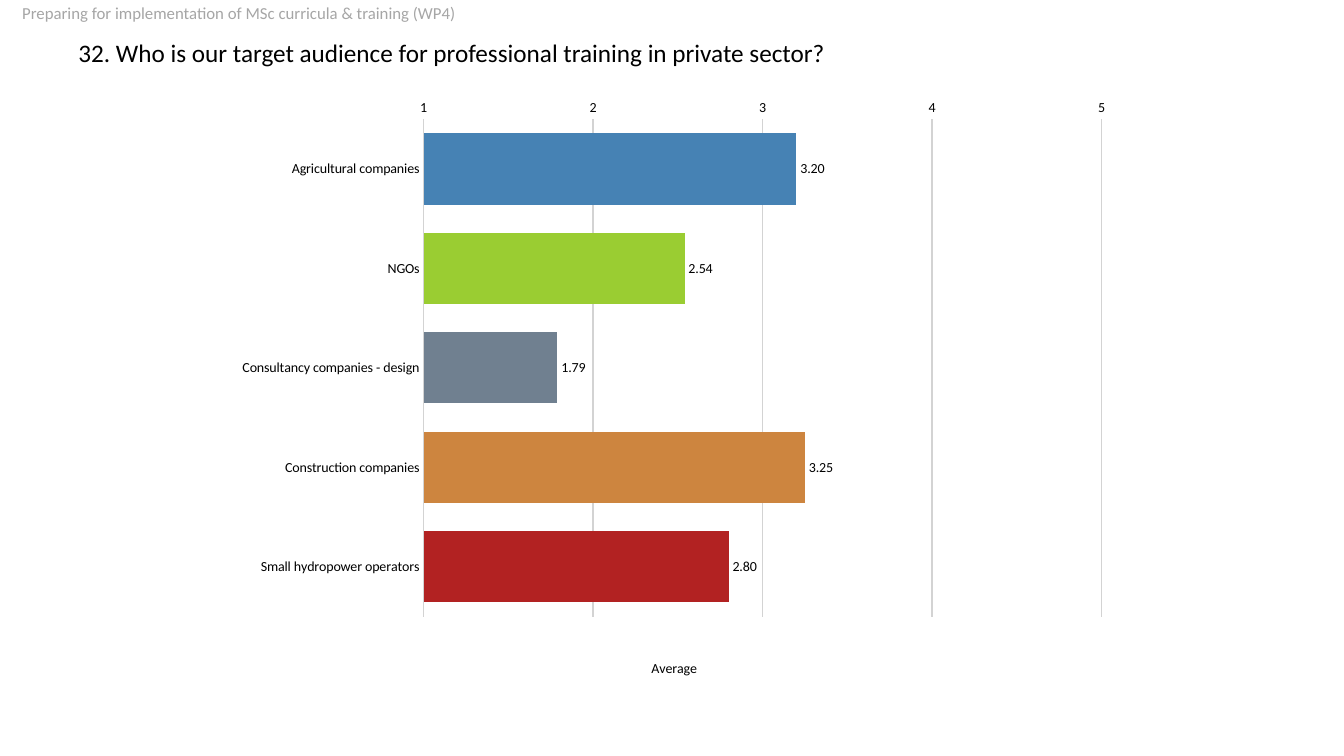
from pptx import Presentation
from pptx.chart.data import CategoryChartData
from pptx.dml.color import RGBColor
from pptx.enum.chart import XL_AXIS_CROSSES, XL_CHART_TYPE, XL_LABEL_POSITION, XL_TICK_MARK
from pptx.enum.text import MSO_ANCHOR
from pptx.oxml import parse_xml
from pptx.oxml.ns import nsdecls, qn
from pptx.util import Inches, Pt

BAR_CLUSTERED = XL_CHART_TYPE.BAR_CLUSTERED
OUTSIDE_END = XL_LABEL_POSITION.OUTSIDE_END
CROSS_AT_MAXIMUM = XL_AXIS_CROSSES.MAXIMUM
NO_TICK = XL_TICK_MARK.NONE
TOP, MIDDLE = MSO_ANCHOR.TOP, MSO_ANCHOR.MIDDLE

BLACK = RGBColor(0x00, 0x00, 0x00)
HEADER_GRAY = RGBColor(0xA6, 0xA6, 0xA6)
GRID_GRAY = RGBColor(0xD3, 0xD3, 0xD3)
STEEL_BLUE = RGBColor(0x46, 0x82, 0xB4)
YELLOW_GREEN = RGBColor(0x9A, 0xCD, 0x32)
SLATE_GRAY = RGBColor(0x70, 0x80, 0x90)
PERU = RGBColor(0xCD, 0x85, 0x3F)
FIREBRICK = RGBColor(0xB2, 0x22, 0x22)

AUDIENCES = [
    ("Agricultural companies", 3.20, STEEL_BLUE),
    ("NGOs", 2.54, YELLOW_GREEN),
    ("Consultancy companies - design", 1.79, SLATE_GRAY),
    ("Construction companies", 3.25, PERU),
    ("Small hydropower operators", 2.80, FIREBRICK),
]


class SurveySlide:
    """Builds survey slide elements in one shared style."""

    font_name = "Calibri"
    chart_size = 10

    def __init__(self, presentation):
        self.slide = presentation.slides.add_slide(presentation.slide_layouts[6])

    def style(self, font, size, color=BLACK):
        font.name = self.font_name
        font.size = Pt(size)
        font.bold = False
        font.color.rgb = color

    def text(self, box, words, size, color, anchor, inset=0.1):
        frame = self.slide.shapes.add_textbox(*map(Inches, box)).text_frame
        frame.word_wrap = True
        frame.vertical_anchor = anchor
        frame.margin_left = Inches(inset)
        frame.text = words
        paragraph = frame.paragraphs[0]
        paragraph.line_spacing = 0.9
        self.style(paragraph.runs[0].font, size, color)

    def place(self, element, index, **fractions):
        for layout in element.findall(qn("c:layout")):
            element.remove(layout)
        target = '<c:layoutTarget val="inner"/>' if "w" in fractions else ""
        modes = "".join(f'<c:{key}Mode val="edge"/>' for key in "xy")
        values = "".join(f'<c:{key} val="{value}"/>' for key, value in fractions.items())
        element.insert(index, parse_xml(
            f'<c:layout {nsdecls("c")}><c:manualLayout>{target}{modes}{values}'
            "</c:manualLayout></c:layout>"))

    def bar_chart(self, box, bars, axis_title):
        data = CategoryChartData(number_format="0.00")
        data.categories = [name for name, _, _ in bars]
        data.add_series("Series 1", [value for _, value, _ in bars])
        frame = self.slide.shapes.add_chart(BAR_CLUSTERED, *map(Inches, box), data)
        chart = frame.chart
        chart.has_legend = False
        chart.has_title = False
        self.style(chart.font, self.chart_size)
        self.bars(chart.plots[0], [color for _, _, color in bars])
        self.axes(chart, axis_title)
        plot_area = chart.plots[0]._element.getparent()
        self.place(plot_area, 0, x=0.225, y=0.02, w=0.749, h=0.846)

    def bars(self, plot, colors):
        plot.gap_width = 40
        plot.vary_by_categories = False
        for index, color in enumerate(colors):
            fill = plot.series[0].points[index].format.fill
            fill.solid()
            fill.fore_color.rgb = color
        plot.has_data_labels = True
        labels = plot.data_labels
        labels.show_value = True
        labels.number_format = "0.00"
        labels.number_format_is_linked = False
        labels.position = OUTSIDE_END
        self.style(labels.font, self.chart_size)

    def axes(self, chart, axis_title):
        for axis in (chart.category_axis, chart.value_axis):
            axis.major_tick_mark = axis.minor_tick_mark = NO_TICK
            axis.format.line.fill.background()
            self.style(axis.tick_labels.font, self.chart_size)
        chart.category_axis.reverse_order = True
        chart.category_axis.crosses = CROSS_AT_MAXIMUM
        value_axis = chart.value_axis
        value_axis.minimum_scale, value_axis.maximum_scale = 1, 5
        value_axis.major_unit = 1
        value_axis.tick_labels.number_format = "General"
        value_axis.tick_labels.number_format_is_linked = False
        grid = value_axis.major_gridlines.format.line
        grid.color.rgb = GRID_GRAY
        grid.width = Pt(1)
        title = value_axis.axis_title
        title.text_frame.text = axis_title
        self.style(title.text_frame.paragraphs[0].runs[0].font, self.chart_size)
        self.place(title._element, 1, x=0.474, y=0.935)


def main():
    presentation = Presentation()
    presentation.slide_width = Inches(13.33)
    presentation.slide_height = Inches(7.5)
    survey = SurveySlide(presentation)
    survey.text((0.68, 0.24, 12, 0.6),
                "32. Who is our target audience for professional training in private sector?",
                18, BLACK, MIDDLE)
    survey.text((0, 0, 13.33, 0.25),
                "Preparing for implementation of MSc curricula & training (WP4)",
                12, HEADER_GRAY, TOP, inset=0.22)
    survey.bar_chart((2.18, 0.99, 8.98, 5.91), AUDIENCES, "Average")
    presentation.save("out.pptx")


if __name__ == "__main__":
    main()
